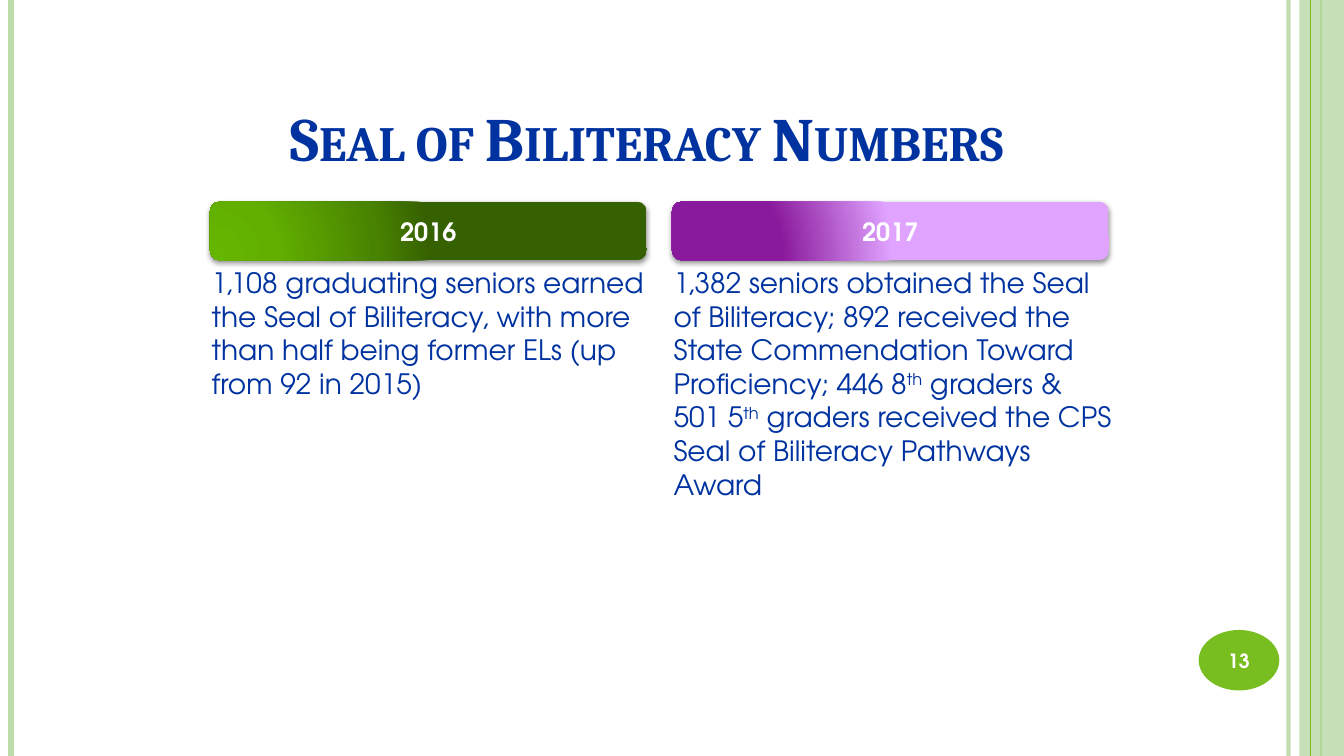
from dataclasses import dataclass

from pptx import Presentation, oxml, util as u
from pptx.dml import color
from pptx.enum import shapes, text
from pptx.oxml import ns


@dataclass(frozen=True)
class Theme:
    """Hold the colours, fonts and type sizes of the slide."""
    ink: str = "0033A0"
    white: str = "FFFFFF"
    pale: str = "BEDBAC"
    green: str = "78BE20"
    green_fade: tuple = ((0, "65B600"), (30, "62AF00"), (75, "498400"), (100, "366100"))
    purple_fade: tuple = ((0, "8A1A9C"), (50, "8A1A9C"), (100, "E0A3FF"))
    heading_font: str = "Cambria"
    body_font: str = "TeX Gyre Adventor"
    title_size: int = 44
    body_size: int = 20
    label_size: int = 18
    number_size: int = 14


class SlideBuilder:
    """Place styled elements on a page divided into 160 columns and 90 rows."""
    COLUMNS, ROWS = 160, 90

    def __init__(self, deck, theme):
        """Add a blank page to the deck."""
        self.theme = theme
        self.page = deck.slides.add_slide(deck.slide_layouts[6])
        self.column = deck.slide_width / self.COLUMNS
        self.row = deck.slide_height / self.ROWS

    def area(self, left, top, width, height):
        """Turn columns and rows into slide lengths."""
        return (round(left * self.column), round(top * self.row),
                round(width * self.column), round(height * self.row))

    def xml(self, markup):
        """Build one drawing element."""
        head, mark, rest = markup.partition(">")
        return oxml.parse_xml(head.rstrip("/") + " " + ns.nsdecls("a")
                              + ("/" if head.endswith("/") else "") + mark + rest)

    def fade(self, target, alpha):
        """Set the opacity of a solid fill or line."""
        for tint in target.iter(ns.qn("a:srgbClr")):
            tint.append(self.xml(f'<a:alpha val="{alpha * 1000}"/>'))

    def rule(self, column, hue, weight, alpha=100):
        """Draw a full-height vertical line."""
        x, top, _, bottom = self.area(column, 0, 0, self.ROWS)
        line = self.page.shapes.add_connector(shapes.MSO_CONNECTOR.STRAIGHT, x, top, x, bottom)
        line.line.color.rgb = color.RGBColor.from_string(hue)
        line.line.width = u.Pt(weight)
        self.fade(line._element.spPr, alpha)
        line._element.spPr.append(self.xml("<a:effectLst/>"))

    def shape(self, kind, area, hue, alpha=100):
        """Draw a plain filled shape."""
        shape = self.page.shapes.add_shape(kind, *self.area(*area))
        shape.shadow.inherit = False
        shape.fill.solid()
        shape.fill.fore_color.rgb = color.RGBColor.from_string(hue)
        shape.line.fill.background()
        self.fade(shape._element.spPr, alpha)
        return shape

    def add_text(self, box, spans, size, hue, anchor=text.MSO_ANCHOR.TOP,
                 align=text.PP_ALIGN.LEFT, font=None, bold=False, caps=False):
        """Set (words, raised) spans in one paragraph."""
        frame = box.text_frame
        frame.word_wrap = True
        frame.vertical_anchor = anchor
        para = frame.paragraphs[0]
        para.alignment = align
        for words, raised in spans:
            span = para.add_run()
            span.text = words
            span.font.name = font or self.theme.body_font
            span.font.size = u.Pt(size)
            span.font.bold = bold
            span.font.color.rgb = color.RGBColor.from_string(hue)
            props = span._r.get_or_add_rPr()
            if raised:
                props.set("baseline", "30000")
            if caps:
                props.set("cap", "small")

    def title(self, area, words):
        """Add the centred small-caps heading."""
        box = self.page.shapes.add_textbox(*self.area(*area))
        self.add_text(box, [(words, False)], self.theme.title_size, self.theme.ink,
                      text.MSO_ANCHOR.BOTTOM, text.PP_ALIGN.CENTER,
                      self.theme.heading_font, bold=True, caps=True)

    def body(self, area, spans):
        """Add a block of body text."""
        box = self.page.shapes.add_textbox(*self.area(*area))
        self.add_text(box, spans, self.theme.body_size, self.theme.ink)

    def label(self, box, words, size):
        """Centre a bold white label in a shape."""
        self.add_text(box, [(words, False)], size, self.theme.white,
                      text.MSO_ANCHOR.MIDDLE, text.PP_ALIGN.CENTER, bold=True)

    def banner(self, area, words, stops):
        """Add a rounded year banner with a radial gradient and soft shadow."""
        box = self.shape(shapes.MSO_SHAPE.ROUNDED_RECTANGLE, area, stops[0][1])
        marks = "".join(f'<a:gs pos="{place * 1000}"><a:srgbClr val="{hue}"/></a:gs>'
                        for place, hue in stops)
        props = box._element.spPr
        props.replace(props.find(ns.qn("a:solidFill")), self.xml(
            f'<a:gradFill rotWithShape="1"><a:gsLst>{marks}</a:gsLst><a:path path="circle">'
            '<a:fillToRect l="5000" t="100000" r="120000" b="10000"/></a:path></a:gradFill>'))
        props.find(ns.qn("a:effectLst")).append(self.xml(
            '<a:outerShdw blurRad="50800" dist="20000" dir="5400000" rotWithShape="0">'
            '<a:srgbClr val="000000"><a:alpha val="42000"/></a:srgbClr></a:outerShdw>'))
        self.label(box, words, self.theme.label_size)

    def page_number(self, area, words):
        """Add the page number in its oval."""
        left, top, width, height = area
        self.shape(shapes.MSO_SHAPE.OVAL, area, self.theme.green)
        box = self.page.shapes.add_textbox(
            *self.area(left - 0.5, top + 0.2, width + 1, height - 0.4))
        self.label(box, words, self.theme.number_size)


def main():
    """Build and save the slide."""
    deck = Presentation()
    deck.slide_width, deck.slide_height = u.Inches(13.33), u.Inches(7.5)
    theme = Theme()
    slide = SlideBuilder(deck, theme)

    slide.rule(153.4, theme.pale, 3, 93)
    slide.rule(1.35, theme.pale, 4.5)
    slide.rule(157.3, theme.green, 1.5)
    slide.shape(shapes.MSO_SHAPE.RECTANGLE, (154.7, 0, 5.3, 90), theme.pale, 87)
    slide.rule(156, theme.green, 0.75)
    slide.title((28, -1.5, 98, 22.8), "Seal of Biliteracy Numbers")

    years = (
        ("2016", theme.green_fade, [
            ("1,108 graduating seniors earned the Seal of Biliteracy, with more than half "
             "being former ELs (up from 92 in 2015)", False)]),
        ("2017", theme.purple_fade, [
            ("1,382 seniors obtained the Seal of Biliteracy; 892 received the State "
             "Commendation Toward Proficiency; 446 8", False),
            ("th", True),
            (" graders & 501 5", False),
            ("th", True),
            (" graders received the CPS Seal of Biliteracy Pathways Award", False)]),
    )
    for index, (year, stops, spans) in enumerate(years):
        left = 25 + 55 * index
        slide.banner((left, 24, 52, 7), year, stops)
        slide.body((left - 1, 31, 55, 45), spans)

    slide.page_number((142.7, 75, 9.6, 7.2), "13")
    deck.save("out.pptx")


if __name__ == "__main__":
    main()
